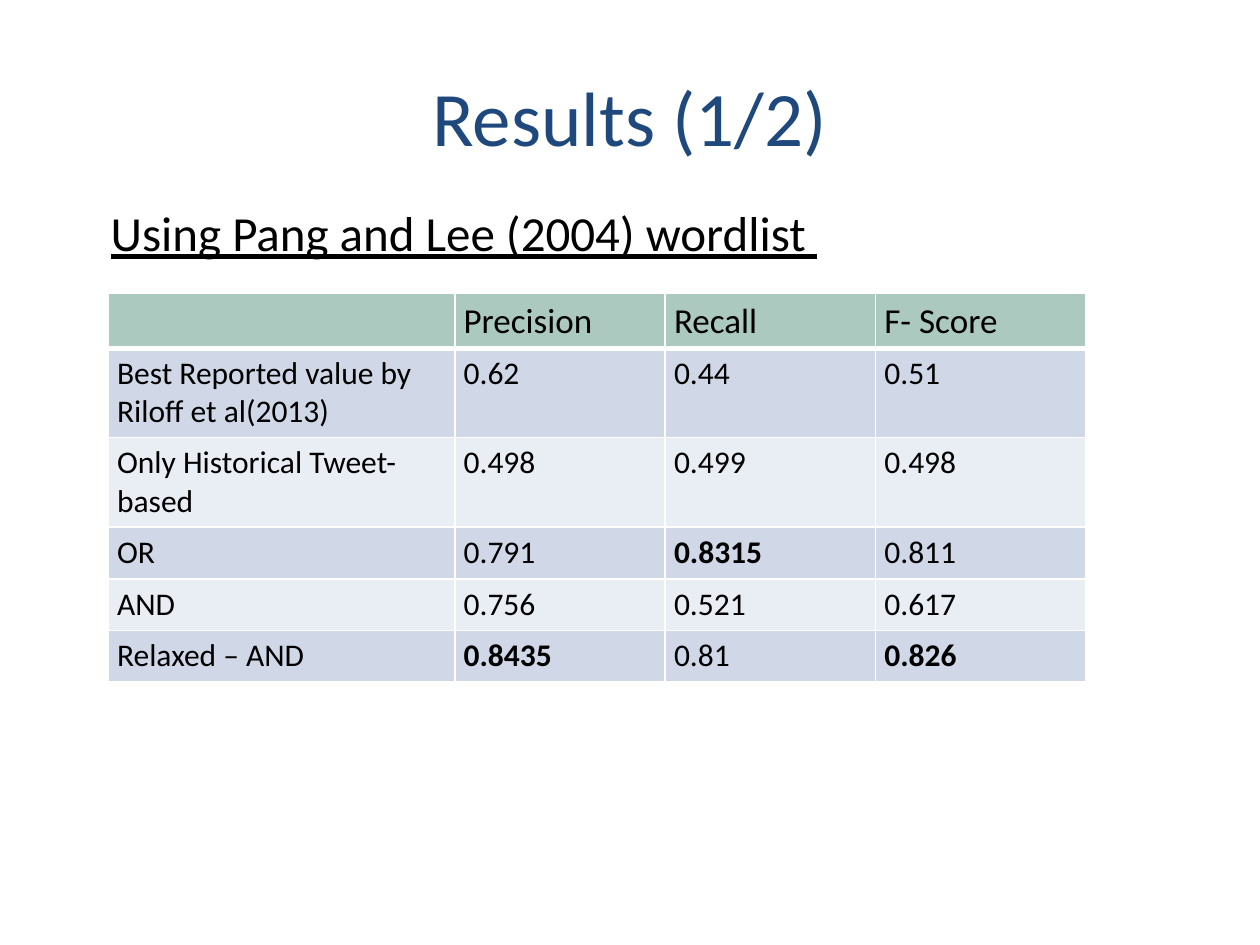
"""Build a results slide with a title, a subheading and a score table."""
from dataclasses import dataclass

from lxml import etree
from pptx import Presentation
from pptx.dml.color import RGBColor
from pptx.enum.text import MSO_ANCHOR, PP_ALIGN
from pptx.oxml.ns import qn
from pptx.util import Inches, Pt

LEFT, CENTER = PP_ALIGN.LEFT, PP_ALIGN.CENTER
TOP = MSO_ANCHOR.TOP
BLANK = 6


@dataclass(frozen=True)
class Theme:
    font: str = "Calibri"
    title: str = "1F497D"
    text: str = "000000"
    border: str = "FFFFFF"
    header: str = "ABC9BF"
    bands: tuple = ("D0D8E8", "E9EDF4")
    title_size: int = 44
    subtitle_size: int = 28
    header_size: int = 20
    body_size: int = 18


THEME = Theme()
COL_WIDTHS = [2.75, 1.67, 1.67, 1.67]
ROW_HEIGHTS = [0.43, 0.71, 0.71, 0.41, 0.41, 0.41]
SCORES = [
    ["", "Precision", "Recall", "F- Score"],
    ["Best Reported value by Riloff et al(2013)", "0.62", "0.44", "0.51"],
    ["Only Historical Tweet-based", "0.498", "0.499", "0.498"],
    ["OR", "0.791", "0.8315", "0.811"],
    ["AND", "0.756", "0.521", "0.617"],
    ["Relaxed – AND", "0.8435", "0.81", "0.826"],
]
BEST = {"0.8435", "0.8315", "0.826"}


def format_runs(p, size, color, bold=False, underline=False):
    for r in p.runs:
        r.font.name = THEME.font
        r.font.size = Pt(size)
        r.font.bold = bold
        r.font.underline = underline
        r.font.color.rgb = RGBColor.from_string(color)


def add_text(slide, text, box, size, color, align=LEFT, underline=False):
    tf = slide.shapes.add_textbox(*map(Inches, box)).text_frame
    tf.word_wrap = True
    tf.vertical_anchor = TOP
    p = tf.paragraphs[0]
    p.text = text
    p.alignment = align
    format_runs(p, size, color, underline=underline)


def set_borders(cell, bottom_width):
    tc_pr = cell._tc.get_or_add_tcPr()
    for side, width in (("L", 1), ("R", 1), ("T", 1), ("B", bottom_width)):
        ln = etree.SubElement(tc_pr, qn(f"a:ln{side}"), w=str(Pt(width)))
        fill = etree.SubElement(ln, qn("a:solidFill"))
        etree.SubElement(fill, qn("a:srgbClr"), val=THEME.border)


def style_cell(cell, text, is_header, fill):
    set_borders(cell, 3 if is_header else 1)
    cell.fill.solid()
    cell.fill.fore_color.rgb = RGBColor.from_string(fill)
    cell.margin_left = cell.margin_right = Inches(0.07)
    cell.margin_top = cell.margin_bottom = Inches(0.05)
    cell.text = text
    size = THEME.header_size if is_header else THEME.body_size
    format_runs(cell.text_frame.paragraphs[0], size, THEME.text, text in BEST)


def add_score_table(slide, left, top):
    box = (left, top, sum(COL_WIDTHS), sum(ROW_HEIGHTS))
    table = slide.shapes.add_table(
        len(SCORES), len(COL_WIDTHS), *map(Inches, box)).table
    table.first_row = table.horz_banding = False
    for column, width in zip(table.columns, COL_WIDTHS):
        column.width = Inches(width)
    for i, (row, height, texts) in enumerate(
            zip(table.rows, ROW_HEIGHTS, SCORES)):
        row.height = Inches(height)
        fill = THEME.bands[(i - 1) % 2] if i else THEME.header
        for cell, text in zip(row.cells, texts):
            style_cell(cell, text, i == 0, fill)


def main():
    prs = Presentation()
    prs.slide_width, prs.slide_height = Inches(10), Inches(7.5)
    slide = prs.slides.add_slide(prs.slide_layouts[BLANK])
    add_text(slide, "Results (1/2)", (0, 0.5, 10, 1.53),
             THEME.title_size, THEME.title, align=CENTER)
    add_score_table(slide, 0.86, 2.33)
    add_text(slide, "Using Pang and Lee (2004) wordlist ",
             (0.78, 1.56, 6.45, 0.57), THEME.subtitle_size, THEME.text,
             underline=True)
    prs.save("out.pptx")


if __name__ == "__main__":
    main()
